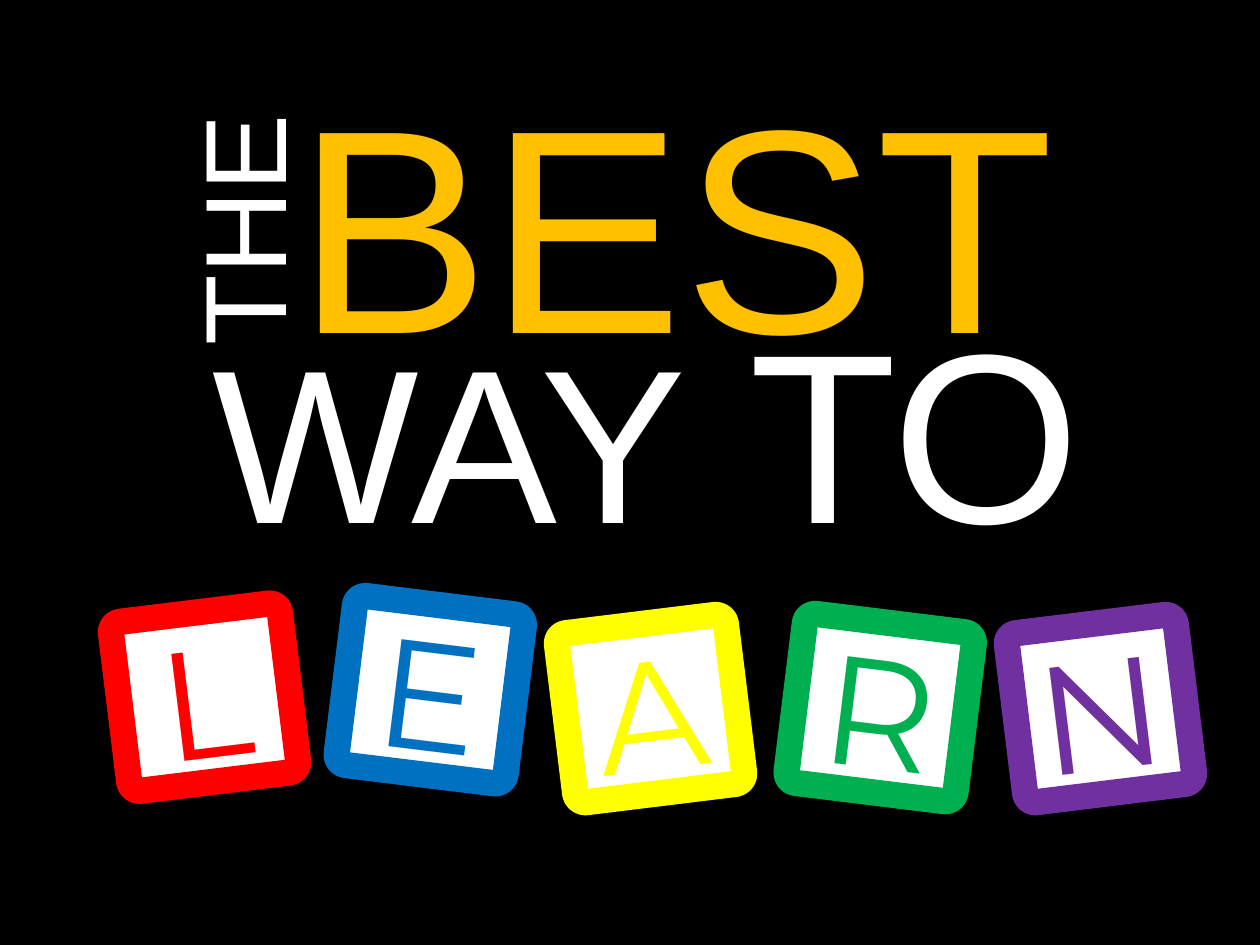
from pptx import Presentation
from pptx.dml.color import RGBColor
from pptx.enum.shapes import MSO_SHAPE
from pptx.enum.text import MSO_ANCHOR, MSO_AUTO_SIZE, PP_ALIGN
from pptx.util import Cm, Pt

WHITE = "FFFFFF"
TILE_SIZE = 3.43
TILE_TILT = 7
TILES = [
    ("L", "FF0000", 2.41, 12.34),
    ("E", "0070C0", 6.96, 12.19),
    ("A", "FFFF00", 11.4, 12.57),
    ("R", "00B050", 16.03, 12.55),
    ("N", "7030A0", 20.47, 12.57),
]


def paint(color_format, color):
    color_format.rgb = RGBColor.from_string(color)


def add_run(paragraph, text, size, font_name, color):
    run = paragraph.add_run()
    run.text = text
    run.font.size = Pt(size)
    run.font.name = font_name
    paint(run.font.color, color)


def add_title_word(group, box, runs, color, rotation=0):
    shape = group.shapes.add_textbox(*(Cm(length) for length in box))
    shape.rotation = rotation
    frame = shape.text_frame
    frame.word_wrap = False
    frame.auto_size = MSO_AUTO_SIZE.SHAPE_TO_FIT_TEXT
    for text, size in runs:
        add_run(frame.paragraphs[0], text, size, "Arial", color)


def add_letter_tile(group, letter, color, left, top, rotation):
    shape = group.shapes.add_shape(
        MSO_SHAPE.ROUNDED_RECTANGLE,
        Cm(left), Cm(top), Cm(TILE_SIZE), Cm(TILE_SIZE),
    )
    shape.adjustments[0] = 0.06
    shape.rotation = rotation
    shape.shadow.inherit = False
    shape.fill.solid()
    paint(shape.fill.fore_color, WHITE)
    paint(shape.line.color, color)
    shape.line.width = Pt(15)
    frame = shape.text_frame
    frame.vertical_anchor = MSO_ANCHOR.MIDDLE
    paragraph = frame.paragraphs[0]
    paragraph.alignment = PP_ALIGN.CENTER
    add_run(paragraph, letter, 88, "Montserrat", color)


def main():
    presentation = Presentation()
    presentation.slide_width = Cm(25.4)
    presentation.slide_height = Cm(19.05)
    slide = presentation.slides.add_slide(presentation.slide_layouts[6])
    slide.background.fill.solid()
    paint(slide.background.fill.fore_color, "000000")

    title = slide.shapes.add_group_shape()
    add_title_word(title, (2.26, 3.07, 5.21, 3.07), [("THE", 66)], WHITE, 270)
    add_title_word(title, (5.72, 0.74, 15.95, 7.34), [("BEST", 166)], "FFC000")
    add_title_word(title, (4.04, 5.56, 18.19, 6.15), [("WAY", 125), (" TO", 138)], WHITE)

    tiles = slide.shapes.add_group_shape()
    for index, (letter, color, left, top) in enumerate(TILES):
        rotation = TILE_TILT if index % 2 else -TILE_TILT
        add_letter_tile(tiles, letter, color, left, top, rotation)

    presentation.save("out.pptx")


if __name__ == "__main__":
    main()
